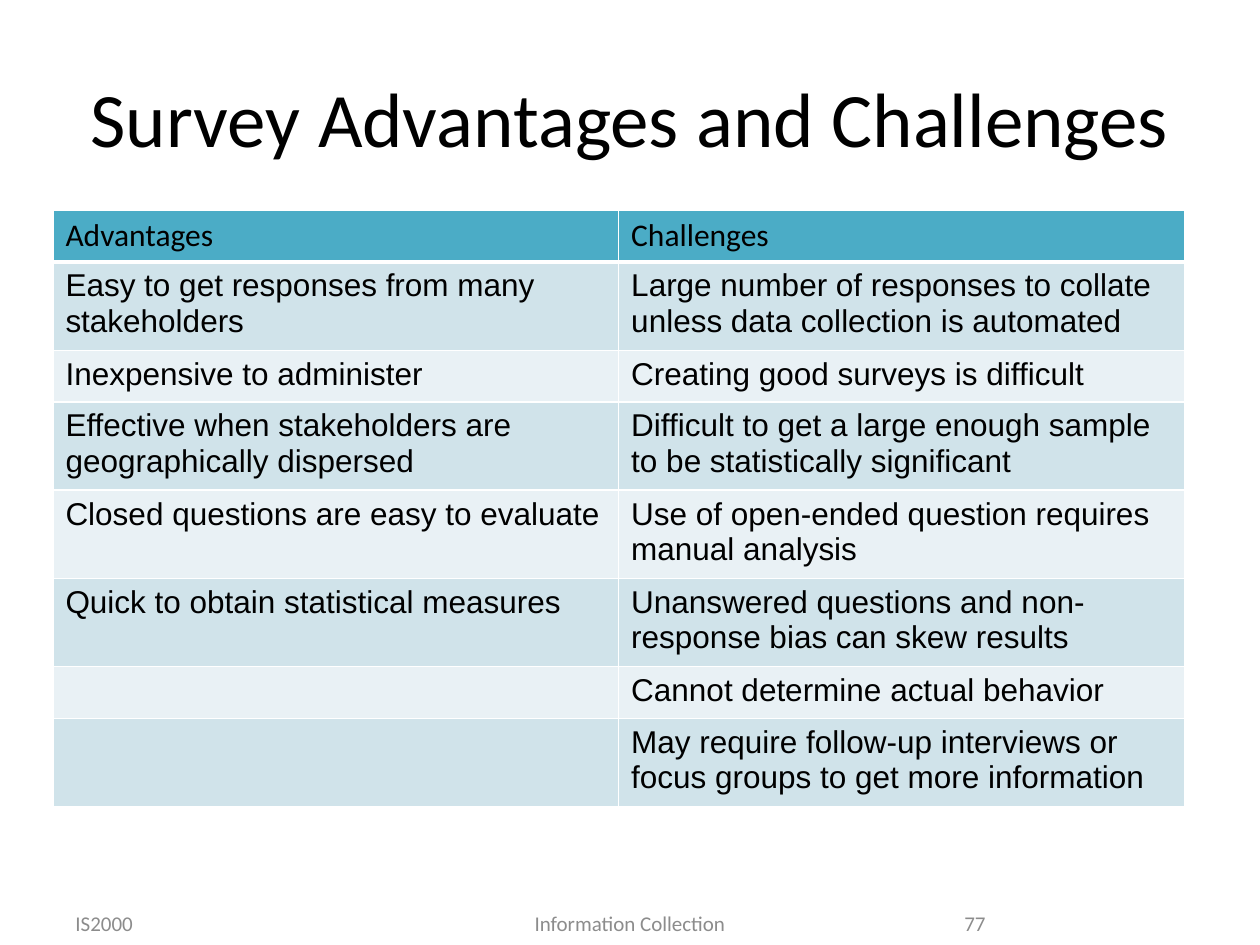
import pptx
import pptx.dml.color
import pptx.enum.text
import pptx.oxml
import pptx.oxml.ns
import pptx.util
from pptx.util import Inches

# Content
TITLE = "Survey Advantages and Challenges"
HEADINGS = ("Advantages", "Challenges")
ROWS = [
    ("Easy to get responses from many stakeholders",
     "Large number of responses to collate unless data collection is automated"),
    ("Inexpensive to administer", "Creating good surveys is difficult"),
    ("Effective when stakeholders are geographically dispersed",
     "Difficult to get a large enough sample to be statistically significant"),
    ("Closed questions are easy to evaluate",
     "Use of open-ended question requires manual analysis"),
    ("Quick to obtain statistical measures",
     "Unanswered questions and non-response bias can skew results"),
    ("", "Cannot determine actual behavior"),
    ("", "May require follow-up interviews or focus groups to get more information"),
]
# Footer: text, left, width, alignment
FOOTERS = [
    ("IS2000", 0.5, 2.33, "LEFT"),
    ("Information Collection", 3.07, 3.86, "CENTER"),
    ("77", 7.17, 0.75, "RIGHT"),
]

THEME = {
    "heading_font": "Calibri", "body_font": "Arial",
    "title_size": 44, "table_size": 18, "footer_size": 12,
    "text": "000000", "muted": "8C8C8C", "border": "FFFFFF",
    "header_fill": "4BACC6", "band_fills": ("D0E3EA", "E9F1F5"),
}
TABLE_LEFT, TABLE_TOP, COLUMN_WIDTH, ROW_HEIGHT = 0.42, 1.67, 4.49, 0.41


def style_paragraph(paragraph, font_name, size, color):
    font = paragraph.font
    font.name = font_name
    font.size = pptx.util.Pt(size)
    font.bold = False
    font.color.rgb = pptx.dml.color.RGBColor.from_string(color)


def add_text(slide, text, box, size, color, alignment):
    shape = slide.shapes.add_textbox(*map(Inches, box))
    frame = shape.text_frame
    frame.word_wrap = True
    frame.vertical_anchor = pptx.enum.text.MSO_ANCHOR.MIDDLE
    paragraph = frame.paragraphs[0]
    paragraph.text = text
    paragraph.alignment = getattr(pptx.enum.text.PP_ALIGN, alignment)
    style_paragraph(paragraph, THEME["heading_font"], size, color)


def set_borders(cell, top, bottom):
    properties = cell._tc.get_or_add_tcPr()
    widths = {"lnL": 1, "lnR": 1, "lnT": top, "lnB": bottom}
    for position, (tag, points) in enumerate(widths.items()):
        line = pptx.oxml.parse_xml(
            f'<a:{tag} {pptx.oxml.ns.nsdecls("a")} w="{pptx.util.Pt(points)}">'
            f'<a:solidFill><a:srgbClr val="{THEME["border"]}"/></a:solidFill></a:{tag}>')
        properties.insert(position, line)


def add_comparison_table(slide):
    contents = [HEADINGS, *ROWS]
    table = slide.shapes.add_table(
        len(contents), len(HEADINGS), Inches(TABLE_LEFT), Inches(TABLE_TOP),
        Inches(COLUMN_WIDTH * len(HEADINGS)), Inches(ROW_HEIGHT * len(contents))).table
    for row_index, texts in enumerate(contents):
        is_header = row_index == 0
        fill = THEME["header_fill"] if is_header else THEME["band_fills"][(row_index - 1) % 2]
        font_name = THEME["heading_font" if is_header else "body_font"]
        for column_index, text in enumerate(texts):
            cell = table.cell(row_index, column_index)
            cell.text = text
            cell.fill.solid()
            cell.fill.fore_color.rgb = pptx.dml.color.RGBColor.from_string(fill)
            set_borders(cell, top=3 if row_index == 1 else 1, bottom=3 if is_header else 1)
            style_paragraph(cell.text_frame.paragraphs[0], font_name,
                            THEME["table_size"], THEME["text"])


def main():
    presentation = pptx.Presentation()
    presentation.slide_width, presentation.slide_height = Inches(10), Inches(7.5)
    slide = presentation.slides.add_slide(presentation.slide_layouts[6])

    # Title
    add_text(slide, TITLE, (0.5, 0.3, 9, 1.25), THEME["title_size"], THEME["text"], "CENTER")

    # Comparison
    add_comparison_table(slide)

    # Footer
    for text, left, width, alignment in FOOTERS:
        add_text(slide, text, (left, 7.17, width, 0.31),
                 THEME["footer_size"], THEME["muted"], alignment)

    presentation.save("out.pptx")


if __name__ == "__main__":
    main()
